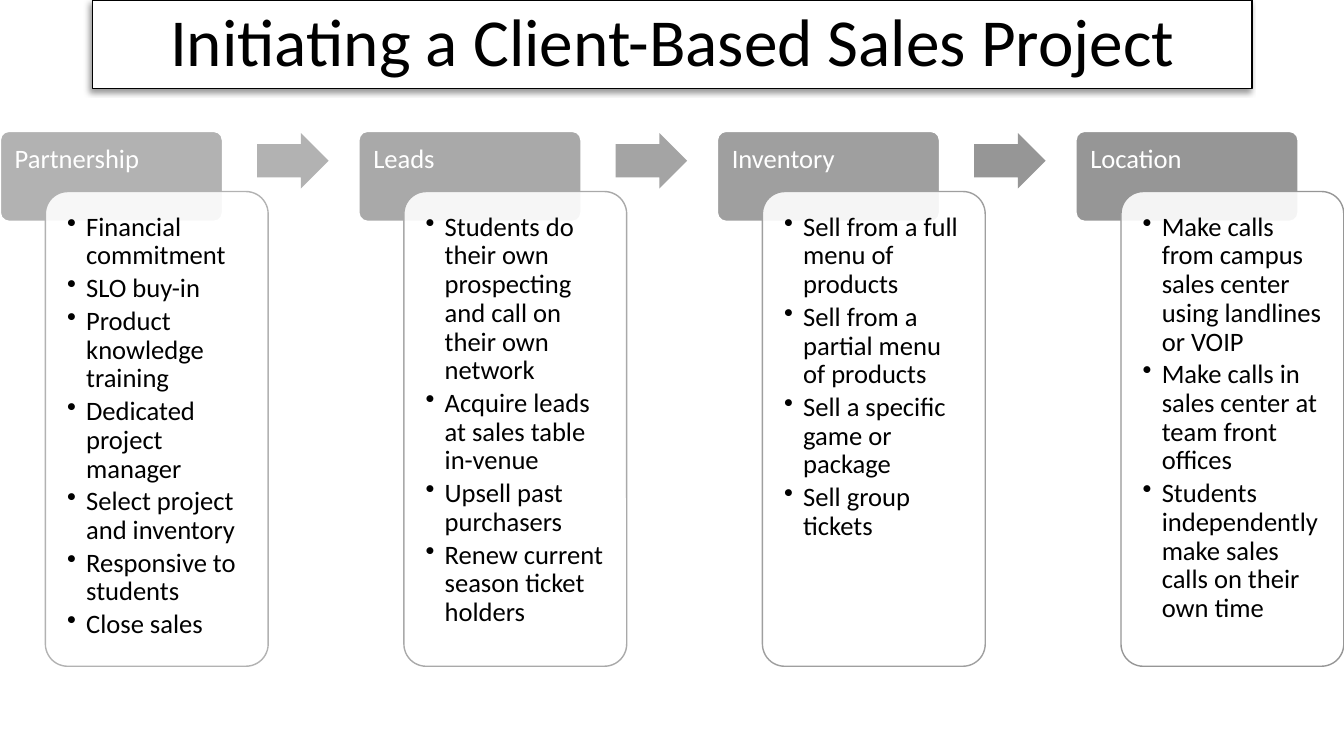
from lxml.etree import SubElement as Sub
from pptx import Presentation
from pptx.dml.color import RGBColor as Rgb
from pptx.enum.shapes import MSO_SHAPE as Kind
from pptx.enum.text import MSO_ANCHOR as Anchor, PP_ALIGN as Align
from pptx.oxml.ns import qn
from pptx.util import Inches, Pt

COLORS = {
    "white": "FFFFFF",
    "black": "000000",
    "step1": "B2B2B2",
    "step2": "A9A9A9",
    "step3": "9F9F9F",
    "step4": "969696",
    "arrow1": "B2B2B2",
    "arrow2": "A4A4A4",
    "arrow3": "969696",
}
FONT = "Calibri"
PITCH = 3.556
STEPS = [
    ("Partnership", [
        "Financial commitment",
        "SLO buy-in",
        "Product knowledge training",
        "Dedicated project manager",
        "Select project and inventory",
        "Responsive to students",
        "Close sales",
    ]),
    ("Leads", [
        "Students do their own prospecting and call on their own network",
        "Acquire leads at sales table in-venue",
        "Upsell past purchasers",
        "Renew current season ticket holders",
    ]),
    ("Inventory", [
        "Sell from a full menu of products",
        "Sell from a partial menu of products",
        "Sell a specific game or package",
        "Sell group tickets",
    ]),
    ("Location", [
        "Make calls from campus sales center using landlines or VOIP",
        "Make calls in sales center at team front offices",
        "Students independently make sales calls on their own time",
    ]),
]


def tint(name):
    return Rgb.from_string(COLORS[name])


def add_box(slide, kind, left, top, width, height, fill, line=None, weight=1):
    box = slide.shapes.add_shape(
        kind, Inches(left), Inches(top), Inches(width), Inches(height))
    box.shadow.inherit = False
    box.fill.solid()
    box.fill.fore_color.rgb = tint(fill)
    if line:
        box.line.color.rgb = tint(line)
        box.line.width = Pt(weight)
    else:
        box.line.fill.background()
    return box


def add_bullet(para):
    props = para._p.get_or_add_pPr()
    props.set("marL", str(Inches(0.19)))
    props.set("indent", str(-Inches(0.19)))
    Sub(props, qn("a:buChar"), char="•")


def set_text(box, lines, size, color, align=Align.LEFT, anchor=Anchor.TOP,
             inset=0.1, after=0, bullet=False):
    frame = box.text_frame
    frame.word_wrap = True
    frame.vertical_anchor = anchor
    frame.margin_left = frame.margin_right = Inches(inset)
    frame.margin_top = frame.margin_bottom = Inches(min(inset, 0.15))
    frame.text = "\n".join(lines)
    for para in frame.paragraphs:
        if bullet:
            add_bullet(para)
        para.alignment = align
        para.line_spacing = 0.9
        para.space_after = Pt(after)
        for run in para.runs:
            run.font.name = FONT
            run.font.size = Pt(size)
            run.font.color.rgb = tint(color)


def set_alpha(node, percent):
    Sub(node, qn("a:alpha"), val=str(percent * 1000))


def add_title(slide):
    box = add_box(slide, Kind.RECTANGLE, 0.92, 0, 11.5, 0.88, "white", "black")
    set_text(box, ["Initiating a Client-Based Sales Project"], 48, "black",
             Align.CENTER, Anchor.MIDDLE, inset=0.05)
    effect = box._element.spPr.find(qn("a:effectLst"))
    shade = Sub(effect, qn("a:outerShdw"), blurRad=str(Pt(4)),
                dist=str(Pt(3)), dir=str(135 * 60000), rotWithShape="0")
    set_alpha(Sub(shade, qn("a:srgbClr"), val=COLORS["black"]), 40)


def add_step(slide, left, name, points, color):
    head = add_box(slide, Kind.ROUNDED_RECTANGLE, left, 1.3, 2.21, 0.9,
                   color, "white", 1.5)
    head.adjustments[0] = 0.1
    set_text(head, [name], 19, "white", inset=0.12)
    card = add_box(slide, Kind.ROUNDED_RECTANGLE, left + 0.45, 1.9, 2.21, 4.71,
                   "white", color)
    card.adjustments[0] = 0.1
    set_alpha(card._element.spPr.find(qn("a:solidFill"))[0], 90)
    set_text(card, points, 19, "black", inset=0.15, after=2.85, bullet=True)


def add_arrow(slide, left, color):
    arrow = add_box(slide, Kind.RIGHT_ARROW, left, 1.32, 0.71, 0.55, color)
    arrow.adjustments[0] = 0.6
    arrow.adjustments[1] = 0.5


def main():
    deck = Presentation()
    deck.slide_width = Inches(13.33)
    deck.slide_height = Inches(7.5)
    slide = deck.slides.add_slide(deck.slide_layouts[6])
    add_title(slide)
    for index, (name, points) in enumerate(STEPS):
        left = index * PITCH
        add_step(slide, left, name, points, f"step{index + 1}")
        if index < len(STEPS) - 1:
            add_arrow(slide, left + 2.55, f"arrow{index + 1}")
    deck.save("out.pptx")


if __name__ == "__main__":
    main()
